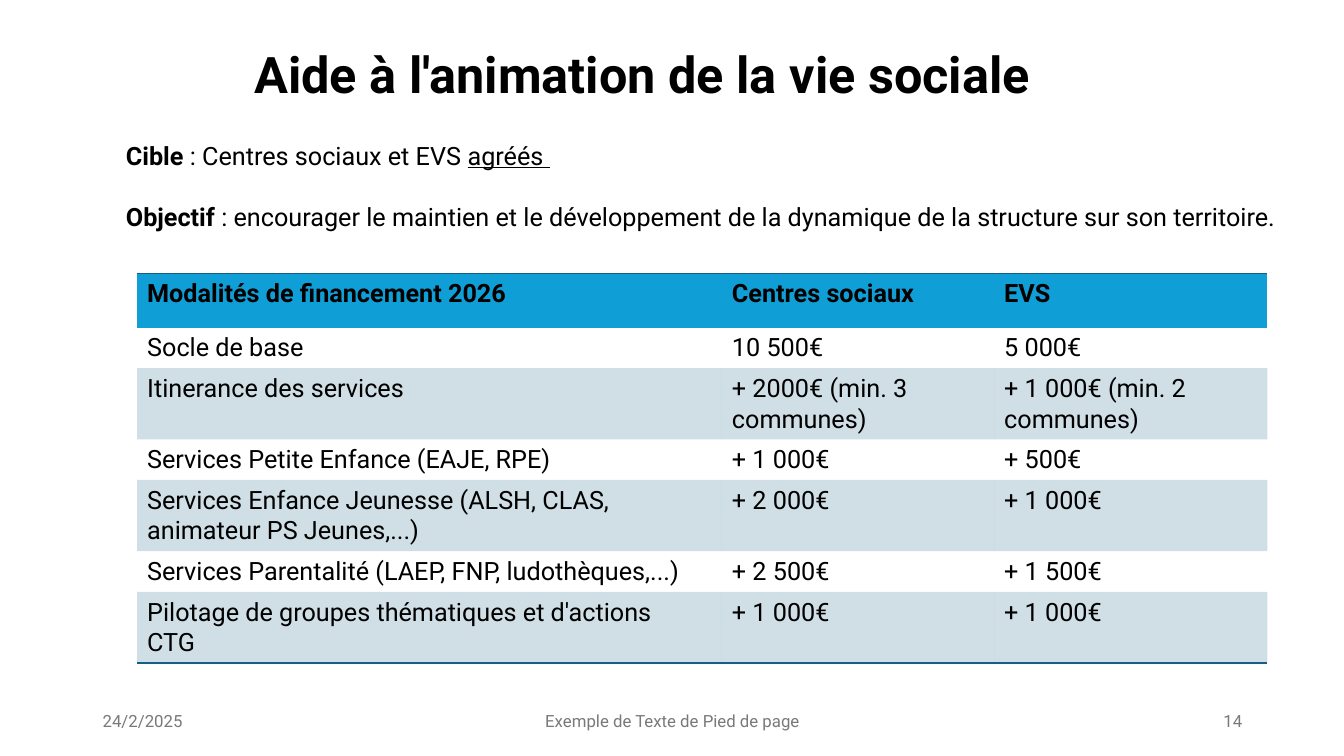
from lxml import etree
from pptx import Presentation
from pptx.dml.color import RGBColor
from pptx.enum.text import MSO_ANCHOR, PP_ALIGN
from pptx.oxml.ns import qn
from pptx.util import Inches, Pt

LEFT, CENTER, RIGHT = PP_ALIGN.LEFT, PP_ALIGN.CENTER, PP_ALIGN.RIGHT
TOP, MIDDLE = MSO_ANCHOR.TOP, MSO_ANCHOR.MIDDLE
BLACK = RGBColor(0x00, 0x00, 0x00)
GRAY = RGBColor(0x79, 0x79, 0x79)
BLUE = RGBColor(0x0F, 0x9E, 0xD5)
TEAL = RGBColor(0x15, 0x60, 0x82)
FONT = "Roboto"
NO_STYLE_NO_GRID = "{2D5ABB26-0587-4C30-8999-92F81FD0307C}"

FINANCING = [
    ("Modalités de financement 2026", "Centres sociaux", "EVS"),
    ("Socle de base", "10 500€", "5 000€"),
    ("Itinerance des services", "+ 2000€ (min. 3 communes)", "+ 1 000€ (min. 2 communes)"),
    ("Services Petite Enfance (EAJE, RPE)", "+ 1 000€", "+ 500€"),
    ("Services Enfance Jeunesse (ALSH, CLAS, animateur PS Jeunes,...)", "+ 2 000€", "+ 1 000€"),
    ("Services Parentalité (LAEP, FNP, ludothèques,...)", "+ 2 500€", "+ 1 500€"),
    ("Pilotage de groupes thématiques et d'actions  CTG", "+ 1 000€", "+ 1 000€"),
]
COLUMN_WIDTHS = [5.8, 2.7, 2.71]
ROW_HEIGHTS = [0.54, 0.4, 0.7, 0.4, 0.7, 0.4, 0.7]


class SlideBuilder:
    def __init__(self, slide):
        self.s = slide

    def style(self, p, size, color=BLACK, bold=None):
        p.font.name = FONT
        p.font.size = Pt(size)
        p.font.color.rgb = color
        p.font.bold = bold

    def text(self, box, paragraphs, size, color=BLACK, align=LEFT, anchor=TOP,
             bold=None, gap=0, spacing=None):
        """Add a text box; each paragraph is a list of (text, bold, underline) runs."""
        tf = self.s.shapes.add_textbox(*map(Inches, box)).text_frame
        tf.word_wrap = True
        tf.vertical_anchor = anchor
        for i, runs in enumerate(paragraphs):
            p = tf.add_paragraph() if i else tf.paragraphs[0]
            p.alignment = align
            p.line_spacing = spacing
            if i:
                p.space_before = Pt(gap)
            self.style(p, size, color, bold)
            for content, run_bold, underline in runs:
                r = p.add_run()
                r.text = content
                r.font.bold = run_bold
                r.font.underline = underline

    def border(self, cell, side):
        """Draw a one-point teal line on one side (lnT or lnB) of a cell."""
        ln = etree.Element(qn(f"a:{side}"), w=str(Pt(1)))
        fill = etree.SubElement(ln, qn("a:solidFill"))
        etree.SubElement(fill, qn("a:srgbClr"), val=str(TEAL))
        cell._tc.get_or_add_tcPr().insert(0, ln)

    def fill(self, cell, color, opacity=100):
        cell.fill.solid()
        cell.fill.fore_color.rgb = color
        if opacity < 100:
            clr = cell._tc.tcPr.find(".//" + qn("a:srgbClr"))
            etree.SubElement(clr, qn("a:alpha"), val=str(opacity * 1000))

    def table(self, left, top, rows, widths, heights):
        frame = self.s.shapes.add_table(
            len(rows), len(widths), Inches(left), Inches(top),
            Inches(sum(widths)), Inches(sum(heights)))
        table = frame.table
        table.first_row = table.horz_banding = False
        table._tbl.tblPr.find(qn("a:tableStyleId")).text = NO_STYLE_NO_GRID
        for column, width in zip(table.columns, widths):
            column.width = Inches(width)
        for i, (row, height, values) in enumerate(zip(table.rows, heights, rows)):
            row.height = Inches(height)
            for cell, value in zip(row.cells, values):
                cell.text = value
                p = cell.text_frame.paragraphs[0]
                p.line_spacing = Pt(21.8)
                self.style(p, 18, bold=i == 0)
                if i == 0:
                    self.fill(cell, BLUE)
                    self.border(cell, "lnT")
                elif i % 2 == 0:
                    self.fill(cell, TEAL, 20)
                else:
                    cell.fill.background()
                if i == len(rows) - 1:
                    self.border(cell, "lnB")


def main():
    prs = Presentation()
    prs.slide_width, prs.slide_height = Inches(13.33), Inches(7.5)
    b = SlideBuilder(prs.slides.add_slide(prs.slide_layouts[6]))

    b.text((1.37, 0.45, 10, 0.88), [[("Aide à l'animation de la vie sociale", None, None)]],
           36, align=CENTER, bold=True, spacing=0.9)
    b.text((1.15, 1.34, 11.99, 1.1), [
        [("Cible", True, None), (" : Centres sociaux et EVS ", None, None),
         ("agréés ", None, True)],
        [("Objectif", True, None),
         (" : encourager le maintien et le développement de la dynamique de la structure"
          " sur son territoire.", None, None)],
    ], 18, gap=22)
    b.table(1.36, 2.71, FINANCING, COLUMN_WIDTHS, ROW_HEIGHTS)

    footers = [
        (0.92, 3, "24/2/2025", LEFT),
        (4.42, 4.5, "Exemple de Texte de Pied de page", CENTER),
        (9.42, 3, "14", RIGHT),
    ]
    for left, width, content, align in footers:
        b.text((left, 6.95, width, 0.4), [[(content, None, None)]], 12, GRAY, align, MIDDLE)

    prs.save("out.pptx")


if __name__ == "__main__":
    main()
